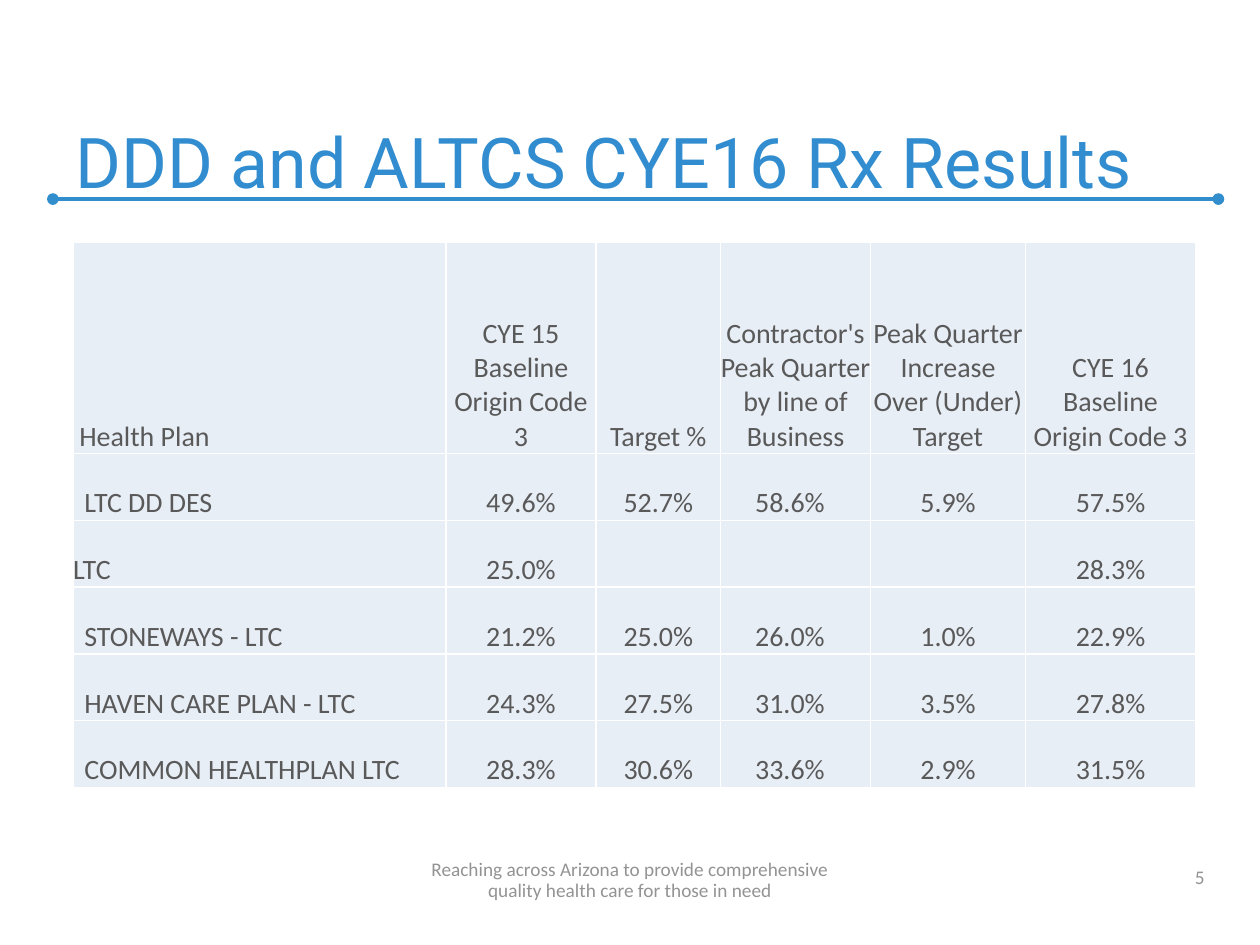
from pptx import Presentation
from pptx.dml.color import RGBColor
from pptx.enum.shapes import MSO_CONNECTOR as Connector
from pptx.enum.text import MSO_ANCHOR as Anchor, PP_ALIGN as Align
from pptx.oxml.ns import qn
from pptx.util import Inches, Pt
from lxml.etree import SubElement

COLORS = {
    "title": "318DCF",
    "rule": "318DCC",
    "body": "595959",
    "footer": "939393",
    "cell": "E8EEF6",
    "border": "FFFFFF",
}
HEADERS = [
    "Health Plan",
    "CYE 15 Baseline\vOrigin Code 3",
    "Target %",
    "Contractor's Peak Quarter\vby line of Business",
    "Peak Quarter Increase Over (Under) Target",
    "CYE 16 Baseline\vOrigin Code 3",
]
PLANS = [
    ["LTC DD DES", "49.6%", "52.7%", "58.6%", "5.9%", "57.5%"],
    ["LTC", "25.0%", "", "", "", "28.3%"],
    ["STONEWAYS - LTC", "21.2%", "25.0%", "26.0%", "1.0%", "22.9%"],
    ["HAVEN CARE PLAN - LTC", "24.3%", "27.5%", "31.0%", "3.5%", "27.8%"],
    ["COMMON HEALTHPLAN LTC", "28.3%", "30.6%", "33.6%", "2.9%", "31.5%"],
]
COLUMN_WIDTHS = [2.96, 1.19, 0.99, 1.19, 1.23, 1.35]
ROW_HEIGHTS = [1.68] + [0.53] * len(PLANS)


def color(name):
    """Return the named colour."""
    return RGBColor.from_string(COLORS[name])


def style_paragraph(paragraph, font_name, size, color_name, align):
    """Set the font and alignment of a paragraph."""
    paragraph.alignment = align
    paragraph.font.name = font_name
    paragraph.font.size = Pt(size)
    paragraph.font.color.rgb = color(color_name)


def add_text(slide, box, text, font_name, size, color_name, align):
    """Add a bottom-anchored text box and return its paragraph."""
    frame = slide.shapes.add_textbox(*map(Inches, box)).text_frame
    frame.word_wrap = True
    frame.vertical_anchor = Anchor.BOTTOM
    paragraph = frame.paragraphs[0]
    paragraph.text = text
    style_paragraph(paragraph, font_name, size, color_name, align)
    return paragraph


def add_rule(slide, left, top, width):
    """Draw the horizontal rule with round ends."""
    rule = slide.shapes.add_connector(
        Connector.STRAIGHT, Inches(left), Inches(top), Inches(left + width), Inches(top)
    )
    rule.line.color.rgb = color("rule")
    rule.line.width = Pt(2.25)
    line = rule.line._get_or_add_ln()
    for end in ("a:headEnd", "a:tailEnd"):
        SubElement(line, qn(end), type="oval")
    SubElement(rule._element.spPr, qn("a:effectLst"))


def add_borders(cell):
    """Give a cell thin borders on all four sides."""
    properties = cell._tc.get_or_add_tcPr()
    for side in ("a:lnL", "a:lnR", "a:lnT", "a:lnB"):
        line = SubElement(properties, qn(side), w=str(Pt(1)))
        fill = SubElement(line, qn("a:solidFill"))
        SubElement(fill, qn("a:srgbClr"), val=COLORS["border"])


def fill_cell(cell, text, align, left=0, right=0):
    """Write and style one table cell."""
    add_borders(cell)
    cell.fill.solid()
    cell.fill.fore_color.rgb = color("cell")
    cell.margin_left, cell.margin_right = Inches(left), Inches(right)
    cell.margin_top = cell.margin_bottom = 0
    cell.vertical_anchor = Anchor.BOTTOM
    paragraph = cell.text_frame.paragraphs[0]
    paragraph.text = text
    style_paragraph(paragraph, "Calibri", 16, "body", align)


def add_results_table(slide, box):
    """Build the table of results by health plan."""
    rows = [HEADERS] + PLANS
    table = slide.shapes.add_table(len(rows), len(HEADERS), *map(Inches, box)).table
    table.first_row = table.horz_banding = False
    for column, width in zip(table.columns, COLUMN_WIDTHS):
        column.width = Inches(width)
    for row, height in zip(table.rows, ROW_HEIGHTS):
        row.height = Inches(height)
    for i, values in enumerate(rows):
        for j, text in enumerate(values):
            align = Align.CENTER if j else Align.LEFT
            left = right = 0
            if j == 0 and text != "LTC":
                left = 0.09 if i else 0.05
            if j == 3 and i:
                right = 0.09
            fill_cell(table.cell(i, j), text, align, left, right)


def add_footer(slide, left, top, width):
    """Add the page number and the centred motto."""
    add_text(slide, (left + 7.33, top, 2.33, 0.32), "5",
             "Calibri", 11, "footer", Align.RIGHT)
    motto = add_text(
        slide, (left, top, width, 0.42),
        "Reaching across Arizona to provide comprehensive\v"
        "quality health care for those in need",
        "Calibri", 11, "footer", Align.CENTER,
    )
    motto.line_spacing = Pt(12)


def main():
    """Build and save the slide."""
    presentation = Presentation()
    presentation.slide_width, presentation.slide_height = Inches(10), Inches(7.5)
    slide = presentation.slides.add_slide(presentation.slide_layouts[6])
    add_rule(slide, 0.42, 1.58, 9.25)
    add_text(slide, (0.5, 0.33, 9.08, 1.33), "DDD and ALTCS CYE16 Rx Results",
             "Roboto", 40, "title", Align.LEFT)
    add_footer(slide, 0, 6.78, 10)
    add_results_table(slide, (0.58, 1.92, 8.92, 4.33))
    presentation.save("out.pptx")


if __name__ == "__main__":
    main()
